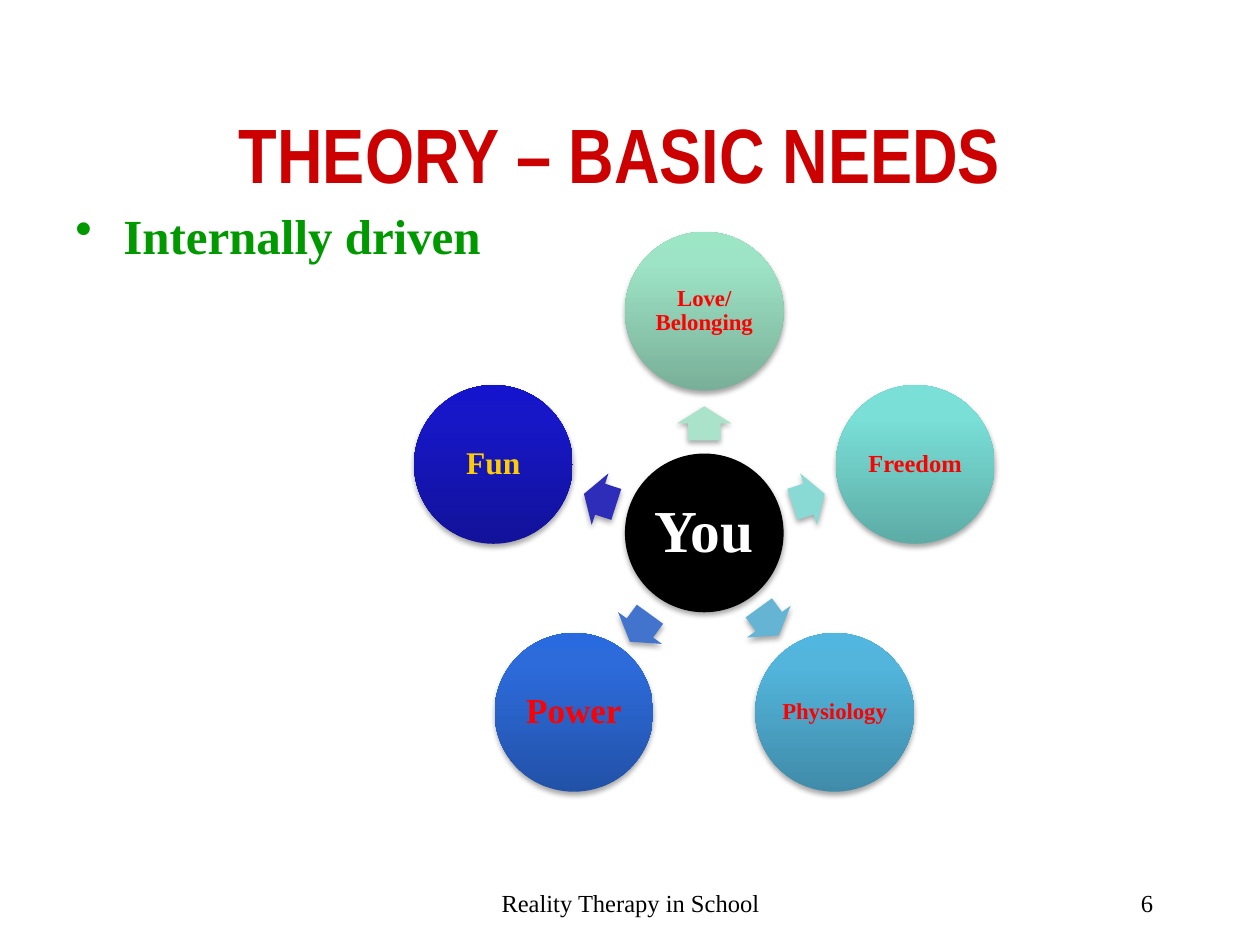
from copy import deepcopy
from math import cos, radians, sin

from lxml.etree import SubElement as Sub
from pptx import Presentation
from pptx.dml.color import RGBColor
from pptx.enum.shapes import MSO_SHAPE as Kind
from pptx.enum.text import MSO_ANCHOR as Anchor, PP_ALIGN as Align
from pptx.oxml.ns import qn
from pptx.util import Inches, Pt

SERIF = "Times New Roman"
MID_X, MID_Y = 5.59, 4.23
SIZE = 1.26
RING, GAP = 1.76, 0.87
LONG, WIDE = 0.27, 0.43

NEEDS = [
    ("Love/ Belonging", 13, "FF0000", 0.02, "AAE2CA", ("79AF98", "9DE3C5", "9CE6C6"), 0),
    ("Freedom", 14, "FF0000", 0.02, "89DAD4", ("5DACA6", "79DFD7", "77E2DA"), 0),
    ("Physiology", 13, "FF0000", 0.02, "66B4D3", ("408BA9", "53B5DC", "51B7E0"), 0),
    ("Power", 20, "FF0000", 0.03, "4374CD", ("2252A8", "2D6BDB", "296ADF"), 0.05),
    ("Fun", 18, "FFCC00", 0.03, "2D2DB9", ("12129A", "1717C8", "1414CC"), 0),
]


def color(code):
    return RGBColor.from_string(code)


def write(frame, text, size, code, font=SERIF, bold=True, align=Align.LEFT,
          anchor=Anchor.TOP, inset=None, space=None, bullet=None):
    frame.word_wrap = True
    frame.vertical_anchor = anchor
    if inset is not None:
        frame.margin_left = frame.margin_right = Inches(inset)
        frame.margin_top = frame.margin_bottom = Inches(inset)
    para = frame.paragraphs[0]
    para.alignment = align
    if space:
        para.line_spacing = space
    if bullet:
        props = para._p.get_or_add_pPr()
        props.set("marL", str(Inches(0.38)))
        props.set("indent", str(-Inches(0.38)))
        Sub(props, qn("a:buChar"), char=bullet)
    run = para.add_run()
    run.text = text
    run.font.name = font
    run.font.size = Pt(size)
    run.font.bold = bold
    run.font.color.rgb = color(code)


def label(slide, box, text, size, code, **form):
    frame = slide.shapes.add_textbox(*map(Inches, box)).text_frame
    write(frame, text, size, code, **form)


def shade(shape):
    shape.shadow.inherit = False
    effect = shape._element.spPr.find(qn("a:effectLst"))
    outer = Sub(effect, qn("a:outerShdw"), blurRad="40000", dist="23000",
                dir="5400000", rotWithShape="0")
    tint = Sub(outer, qn("a:srgbClr"), val="000000")
    Sub(tint, qn("a:alpha"), val="35000")


def blend(shape, codes):
    fill = shape.fill
    fill.gradient()
    fill.gradient_angle = 90
    stops = shape._element.spPr.find(".//" + qn("a:gsLst"))
    stops.append(deepcopy(stops[-1]))
    for stop, code, place in zip(fill.gradient_stops, codes, (0, 0.8, 1)):
        stop.color.rgb = color(code)
        stop.position = place


def place(slide, kind, x, y, wide, high, *codes):
    shape = slide.shapes.add_shape(
        kind, Inches(x - wide / 2), Inches(y - high / 2), Inches(wide), Inches(high))
    if len(codes) == 1:
        shape.fill.solid()
        shape.fill.fore_color.rgb = color(codes[0])
    else:
        blend(shape, codes)
    shape.line.fill.background()
    shade(shape)
    return shape


def disc(slide, x, y, codes, text, size, ink, inset):
    shape = place(slide, Kind.OVAL, x, y, SIZE, SIZE, *codes)
    write(shape.text_frame, text, size, ink, align=Align.CENTER,
          anchor=Anchor.MIDDLE, inset=inset, space=0.9)


def arrow(slide, x, y, angle, code):
    shape = place(slide, Kind.RIGHT_ARROW, x, y, LONG, WIDE, code)
    shape.adjustments[0] = 0.6
    shape.adjustments[1] = 0.5
    shape.rotation = angle % 360


def wheel(slide):
    disc(slide, MID_X, MID_Y, ["000000"], "You", 34, "FFFFFF", 0.05)
    for i, (text, size, ink, inset, tint, codes, drop) in enumerate(NEEDS):
        angle = 360 / len(NEEDS) * i - 90
        dx, dy = cos(radians(angle)), sin(radians(angle))
        arrow(slide, MID_X + GAP * dx, MID_Y + GAP * dy + drop, angle, tint)
        disc(slide, MID_X + RING * dx, MID_Y + RING * dy, codes, text, size, ink, inset)


def main():
    deck = Presentation()
    deck.slide_width, deck.slide_height = Inches(10), Inches(7.5)
    slide = deck.slides.add_slide(deck.slide_layouts[6])
    label(slide, (3.42, 7, 3.17, 0.5), "Reality Therapy in School", 14, "000000",
          bold=False, align=Align.CENTER)
    label(slide, (7.17, 7, 2.08, 0.5), "6", 14, "000000",
          bold=False, align=Align.RIGHT)
    label(slide, (0.67, 0.75, 8.5, 0.92), "THEORY – BASIC NEEDS", 44, "CC0000",
          font="Arial Narrow", align=Align.CENTER, anchor=Anchor.MIDDLE)
    label(slide, (0.5, 1.58, 8.25, 5), "Internally driven", 28, "009900", bullet="•")
    wheel(slide)
    deck.save("out.pptx")


if __name__ == "__main__":
    main()
